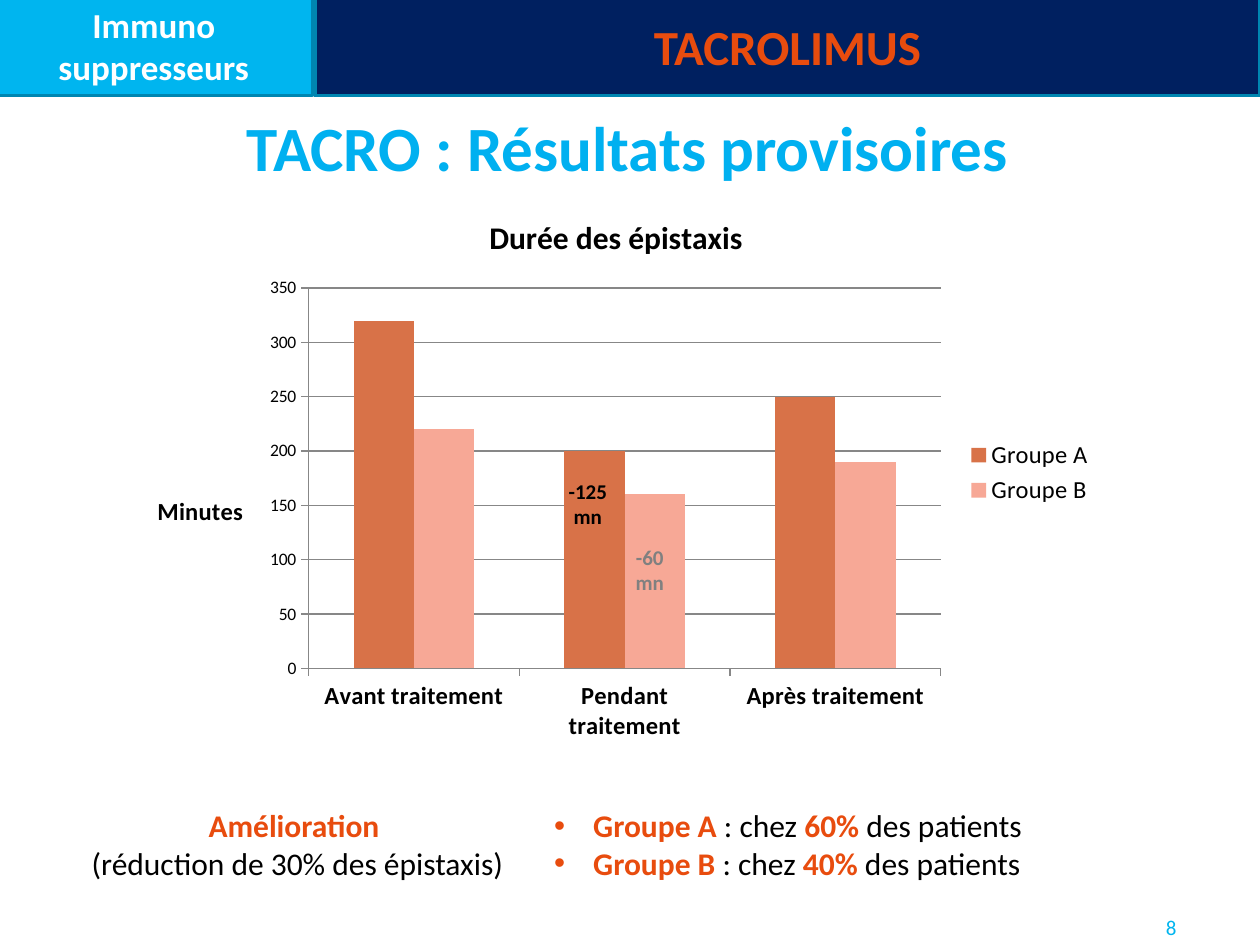
from typing import NamedTuple

from lxml.etree import SubElement
from pptx import Presentation
from pptx.chart.data import CategoryChartData
from pptx.dml.color import RGBColor
from pptx.enum.chart import XL_CHART_TYPE as ChartType
from pptx.enum.chart import XL_LEGEND_POSITION as LegendPosition
from pptx.enum.chart import XL_TICK_MARK as TickMark
from pptx.enum.shapes import MSO_SHAPE as Preset
from pptx.enum.text import MSO_ANCHOR as Anchor
from pptx.enum.text import PP_ALIGN as Align
from pptx.oxml import parse_xml
from pptx.oxml.ns import nsdecls, qn
from pptx.util import Cm, Pt

FONT = "Calibri"
WHITE = RGBColor(0xFF, 0xFF, 0xFF)
BLACK = RGBColor(0, 0, 0)
GREY = RGBColor(0x80, 0x80, 0x80)
AXIS_GREY = RGBColor(0x87, 0x87, 0x87)
SKY = RGBColor(0x00, 0xB0, 0xF0)
CYAN = RGBColor(0x00, 0xB5, 0xEF)
TEAL = RGBColor(0x00, 0x86, 0xB1)
NAVY = RGBColor(0x00, 0x20, 0x60)
ORANGE = RGBColor(0xE8, 0x4C, 0x0E)
RUST = RGBColor(0xD8, 0x72, 0x48)
SALMON = RGBColor(0xF7, 0xA8, 0x96)


class Box(NamedTuple):
    """Left, top, width and height in centimetres."""
    left: float
    top: float
    width: float
    height: float

    def lengths(self) -> list:
        return [Cm(value) for value in self]


class Span(NamedTuple):
    text: str
    color: RGBColor
    bold: bool = True


class Banner(NamedTuple):
    box: Box
    lines: list[str]
    size: int
    color: RGBColor
    fill: RGBColor


class TextBlock(NamedTuple):
    box: Box
    lines: list[list[Span]]
    size: int
    align: Align = Align.CENTER
    anchor: Anchor = Anchor.TOP
    bulleted: bool = False


class Group(NamedTuple):
    name: str
    minutes: tuple[int, ...]
    color: RGBColor


def result_line(group: str, rate: str) -> list[Span]:
    return [Span(group, ORANGE), Span(" : chez ", BLACK, False),
            Span(rate, ORANGE), Span(" des patients", BLACK, False)]


def change_label(left: float, top: float, change: str, color: RGBColor) -> TextBlock:
    return TextBlock(Box(left, top, 1.6, 1.27),
                     [[Span(change, color)], [Span("mn", color)]], 12)


BANNERS = [
    Banner(Box(-0.1, -0.08, 6.4, 2.01), ["Immuno", "suppresseurs"], 20, WHITE, CYAN),
    Banner(Box(6.35, -0.08, 19.05, 2.01), ["TACROLIMUS"], 28, ORANGE, NAVY),
]
HEADING = TextBlock(Box(-0.1, 1.98, 25.5, 1.96),
                    [[Span("TACRO : Résultats provisoires", SKY)]], 36,
                    anchor=Anchor.MIDDLE)
PAGE_NUMBER = TextBlock(Box(22.5, 18.31, 1.47, 0.81),
                        [[Span("8", CYAN, False)]], 12, Align.RIGHT)
CHANGES = [change_label(11.05, 9.52, "-125", BLACK),
           change_label(12.3, 10.85, "-60", GREY)]
RESULTS = [
    TextBlock(Box(10.92, 16.13, 10.39, 1.8),
              [result_line("Groupe A", "60%"), result_line("Groupe B", "40%")],
              18, Align.LEFT, bulleted=True),
    TextBlock(Box(1.3, 16.13, 9.4, 1.8),
              [[Span("Amélioration ", ORANGE)],
               [Span("(réduction de 30% des épistaxis)", BLACK, False)]], 18),
]
CHART_BOX = Box(2.69, 3.89, 19.61, 11.28)
PERIODS = ["Avant traitement", "Pendant traitement", "Après traitement"]
GROUPS = [Group("Groupe A", (320, 200, 250), RUST),
          Group("Groupe B", (220, 160, 190), SALMON)]


def style(font, size: int, color: RGBColor, bold: bool) -> None:
    font.name, font.size, font.bold = FONT, Pt(size), bold
    font.color.rgb = color


def add_bullet(paragraph) -> None:
    properties = paragraph._p.get_or_add_pPr()
    properties.set("marL", str(Cm(0.79)))
    properties.set("indent", str(-Cm(0.79)))
    SubElement(properties, qn("a:buFont"), typeface="Arial")
    SubElement(properties, qn("a:buChar"), char="•")


def write_lines(frame, lines: list[list[Span]], size: int, align: Align,
                bulleted: bool = False) -> None:
    for index, spans in enumerate(lines):
        paragraph = frame.add_paragraph() if index else frame.paragraphs[0]
        paragraph.alignment = align
        if bulleted:
            add_bullet(paragraph)
        for span in spans:
            run = paragraph.add_run()
            run.text = span.text
            style(run.font, size, span.color, span.bold)


def add_banner(slide, banner: Banner) -> None:
    shape = slide.shapes.add_shape(Preset.RECTANGLE, *banner.box.lengths())
    shape.shadow.inherit = False
    shape.fill.solid()
    shape.fill.fore_color.rgb = banner.fill
    shape.line.color.rgb = TEAL
    shape.line.width = Pt(2)
    shape.text_frame.vertical_anchor = Anchor.MIDDLE
    lines = [[Span(line, banner.color)] for line in banner.lines]
    write_lines(shape.text_frame, lines, banner.size, Align.CENTER)


def add_text(slide, block: TextBlock) -> None:
    frame = slide.shapes.add_textbox(*block.box.lengths()).text_frame
    frame.word_wrap = True
    frame.vertical_anchor = block.anchor
    write_lines(frame, block.lines, block.size, block.align, block.bulleted)


def place(element, index: int, **fractions: float) -> None:
    """Give a chart part a manual layout, in fractions of the chart."""
    for old in element.findall(qn("c:layout")):
        element.remove(old)
    target = '<c:layoutTarget val="inner"/>' if "w" in fractions else ""
    modes = '<c:xMode val="edge"/><c:yMode val="edge"/>'
    values = "".join(f'<c:{key} val="{value}"/>' for key, value in fractions.items())
    element.insert(index, parse_xml(
        f'<c:layout {nsdecls("c")}><c:manualLayout>{target}{modes}{values}'
        "</c:manualLayout></c:layout>"))


def add_title(title, text: str, size: int, x: float, y: float) -> None:
    title.text_frame.text = text
    style(title.text_frame.paragraphs[0].runs[0].font, size, BLACK, True)
    place(title._element, 1, x=x, y=y)


def add_duration_chart(slide) -> None:
    data = CategoryChartData()
    data.categories = PERIODS
    for group in GROUPS:
        data.add_series(group.name, group.minutes)
    chart = slide.shapes.add_chart(
        ChartType.COLUMN_CLUSTERED, *CHART_BOX.lengths(), data).chart
    style(chart.font, 10, BLACK, False)

    add_title(chart.chart_title, "Durée des épistaxis", 18, 0.36, 0.03)
    chart.chart_title.include_in_layout = True
    chart.has_legend = True
    chart.legend.position = LegendPosition.RIGHT
    chart.legend.include_in_layout = False
    style(chart.legend.font, 14, BLACK, False)

    periods, minutes = chart.category_axis, chart.value_axis
    style(periods.tick_labels.font, 14, BLACK, True)
    minutes.minimum_scale, minutes.maximum_scale, minutes.major_unit = 0, 350, 50
    minutes.has_major_gridlines = True
    for line in (periods.format.line, minutes.format.line,
                 minutes.major_gridlines.format.line):
        line.color.rgb = AXIS_GREY
        line.width = Pt(0.75)
    for axis in (periods, minutes):
        axis.major_tick_mark = TickMark.OUTSIDE
    add_title(minutes.axis_title, "Minutes", 14, 0.02, 0.53)
    text_body = minutes.axis_title._element.find(".//" + qn("a:bodyPr"))
    text_body.set("rot", "0")
    text_body.set("vert", "horz")

    plot = chart.plots[0]
    plot.vary_by_categories = False
    plot.gap_width, plot.overlap = 150, 0
    for series, group in zip(plot.series, GROUPS):
        series.format.fill.solid()
        series.format.fill.fore_color.rgb = group.color
    plot_area = chart._chartSpace.find(".//" + qn("c:plotArea"))
    place(plot_area, 0, x=0.18, y=0.17, w=0.65, h=0.68)


def main() -> None:
    deck = Presentation()
    deck.slide_width, deck.slide_height = Cm(25.4), Cm(19.05)
    slide = deck.slides.add_slide(deck.slide_layouts[6])
    for block in (HEADING, PAGE_NUMBER):
        add_text(slide, block)
    for banner in BANNERS:
        add_banner(slide, banner)
    add_duration_chart(slide)
    for block in CHANGES + RESULTS:
        add_text(slide, block)
    deck.save("out.pptx")


if __name__ == "__main__":
    main()
